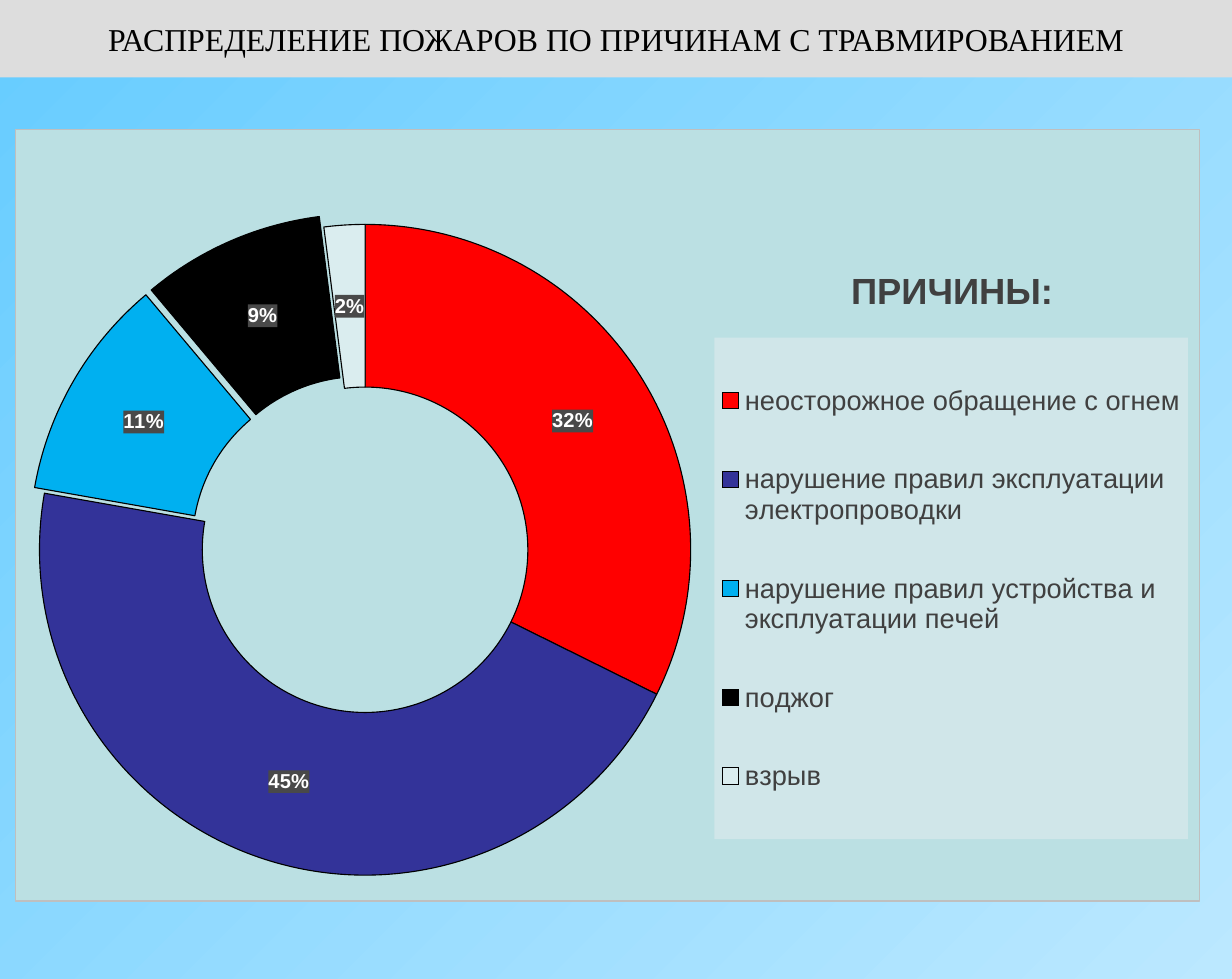
import pptx
import pptx.chart.data
import pptx.dml.color
import pptx.enum.chart
import pptx.enum.shapes
import pptx.enum.text
import pptx.oxml
import pptx.oxml.ns
import pptx.util

Inches, Pt = pptx.util.Inches, pptx.util.Pt
RGBColor = pptx.dml.color.RGBColor
qn = pptx.oxml.ns.qn

HEADING = "РАСПРЕДЕЛЕНИЕ ПОЖАРОВ ПО ПРИЧИНАМ С ТРАВМИРОВАНИЕМ"
CHART_TITLE = "ПРИЧИНЫ:"
# cause, percent, colour, explosion
CAUSES = [
    ("неосторожное обращение с огнем", 32, RGBColor(0xFF, 0x00, 0x00), 0),
    ("нарушение правил эксплуатации электропроводки", 45, RGBColor(0x33, 0x33, 0x99), 0),
    ("нарушение правил устройства и эксплуатации печей", 11, RGBColor(0x00, 0xB0, 0xF0), 7),
    ("поджог", 9, RGBColor(0x00, 0x00, 0x00), 7),
    ("взрыв", 2, RGBColor(0xDA, 0xED, 0xEF), 0),
]
BLACK = RGBColor(0x00, 0x00, 0x00)
WHITE = RGBColor(0xFF, 0xFF, 0xFF)
DARK = RGBColor(0x40, 0x40, 0x40)
LABEL_FILL = RGBColor(0x49, 0x49, 0x49)
BAND = RGBColor(0xDD, 0xDD, 0xDD)
PANEL = RGBColor(0xBB, 0xE0, 0xE3)
PANEL_EDGE = RGBColor(0xBF, 0xBF, 0xBF)
LEGEND_FILL = RGBColor(0xD0, 0xE6, 0xE9)
SKY = (RGBColor(0x66, 0xCC, 0xFF), RGBColor(0xBB, 0xE8, 0xFF))

C_NS = pptx.oxml.ns.nsdecls("c", "a")


def set_font(font, name, size, color, bold=False):
    font.name, font.size, font.bold = name, Pt(size), bold
    font.color.rgb = color


def chart_part(chart, tag):
    return chart.element.find(".//" + qn(tag))


def place(parent, index, **fractions):
    """Give a chart part a manual layout in fractions of the chart."""
    old = parent.find(qn("c:layout"))
    if old is not None:
        index = parent.index(old)
        parent.remove(old)
    modes = '<c:xMode val="edge"/><c:yMode val="edge"/>'
    if parent.tag == qn("c:plotArea"):
        modes = '<c:layoutTarget val="inner"/>' + modes
    sizes = "".join(f'<c:{k} val="{v}"/>' for k, v in fractions.items())
    parent.insert(index, pptx.oxml.parse_xml(
        f"<c:layout {C_NS}><c:manualLayout>{modes}{sizes}</c:manualLayout></c:layout>"))


def paint(parent, fill, edge=None):
    """Fill a chart part, whose text properties are already set."""
    line = "<a:ln><a:noFill/></a:ln>"
    if edge is not None:
        line = (f'<a:ln w="{Pt(0.75)}"><a:solidFill><a:srgbClr val="{edge}"/>'
                "</a:solidFill></a:ln>")
    parent.find(qn("c:txPr")).addprevious(pptx.oxml.parse_xml(
        f'<c:spPr {C_NS}><a:solidFill><a:srgbClr val="{fill}"/></a:solidFill>{line}</c:spPr>'))


def add_heading(s):
    sp = s.shapes.add_shape(pptx.enum.shapes.MSO_SHAPE.RECTANGLE,
                            0, 0, Inches(11.3), Inches(0.71))
    sp.shadow.inherit = False
    sp.fill.solid()
    sp.fill.fore_color.rgb = BAND
    sp.line.fill.background()
    tf = sp.text_frame
    tf.word_wrap = True
    tf.vertical_anchor = pptx.enum.text.MSO_ANCHOR.MIDDLE
    tf.margin_left = tf.margin_right = Inches(0.12)
    tf.margin_top = tf.margin_bottom = Inches(0.06)
    p = tf.paragraphs[0]
    p.text = HEADING
    p.alignment = pptx.enum.text.PP_ALIGN.CENTER
    set_font(p.font, "Times New Roman", 21, BLACK)


def add_causes_chart(s):
    data = pptx.chart.data.CategoryChartData()
    data.categories = [cause for cause, *_ in CAUSES]
    data.add_series("Series 1", [percent for _, percent, *_ in CAUSES])
    chart = s.shapes.add_chart(
        pptx.enum.chart.XL_CHART_TYPE.DOUGHNUT,
        Inches(0.14), Inches(1.18), Inches(10.87), Inches(7.09), data).chart
    set_font(chart.font, "Arial", 10, BLACK)
    paint(chart.element, PANEL, PANEL_EDGE)
    place(chart_part(chart, "c:plotArea"), 0, x=0.02, y=0.12, w=0.55, h=0.85)

    chart.has_title = True
    p = chart.chart_title.text_frame.paragraphs[0]
    p.text = CHART_TITLE
    set_font(p.font, "Arial", 24, DARK, bold=True)
    place(chart_part(chart, "c:title"), 1, x=0.7, y=0.17)

    chart.has_legend = True
    legend = chart.legend
    legend.position = pptx.enum.chart.XL_LEGEND_POSITION.RIGHT
    legend.include_in_layout = False
    set_font(legend.font, "Arial", 18, DARK)
    legend_part = chart_part(chart, "c:legend")
    paint(legend_part, LEGEND_FILL)
    place(legend_part, 1, x=0.59, y=0.27, w=0.4, h=0.65)

    plot = chart.plots[0]
    plot.vary_by_categories = True
    series = plot.series[0]
    series_part = chart_part(chart, "c:ser")
    for i, (_, _, color, explosion) in enumerate(CAUSES):
        fmt = series.points[i].format
        fmt.fill.solid()
        fmt.fill.fore_color.rgb = color
        fmt.line.color.rgb = BLACK
        fmt.line.width = Pt(0.75)
        if explosion:
            dpt = series_part.findall(qn("c:dPt"))[-1]
            dpt.find(qn("c:spPr")).addprevious(pptx.oxml.parse_xml(
                f'<c:explosion {C_NS} val="{explosion}"/>'))

    labels = series.data_labels
    labels.show_percentage = True
    labels.show_value = False
    labels.number_format = "0%"
    labels.number_format_is_linked = False
    set_font(labels.font, "Arial", 13.3, WHITE, bold=True)
    paint(series_part.find(qn("c:dLbls")), LABEL_FILL)


def main():
    prs = pptx.Presentation()
    prs.slide_width, prs.slide_height = Inches(11.3), Inches(8.98)
    s = prs.slides.add_slide(prs.slide_layouts[6])
    fill = s.background.fill
    fill.gradient()
    fill.gradient_angle = 315
    for stop, position, color in zip(fill.gradient_stops, (0, 1), SKY):
        stop.position = position
        stop.color.rgb = color
    add_heading(s)
    add_causes_chart(s)
    prs.save("out.pptx")


if __name__ == "__main__":
    main()
